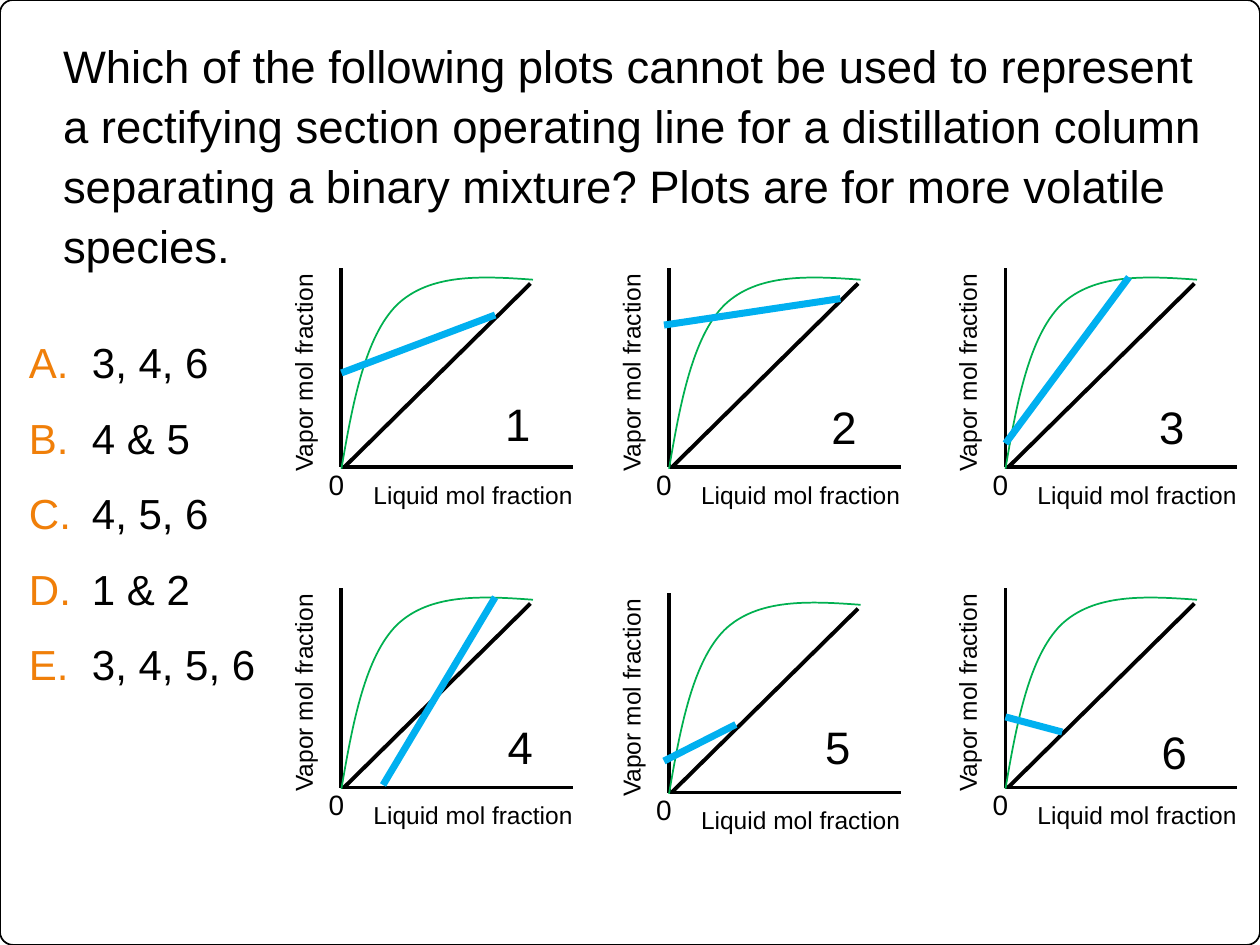
from lxml import etree
from pptx import Presentation
from pptx.dml.color import RGBColor
from pptx.enum.shapes import MSO_CONNECTOR, MSO_SHAPE
from pptx.enum.text import PP_ALIGN
from pptx.oxml.ns import qn
from pptx.util import Inches, Pt

STRAIGHT = MSO_CONNECTOR.STRAIGHT
ROUNDED = MSO_SHAPE.ROUNDED_RECTANGLE
LEFT, CENTER = PP_ALIGN.LEFT, PP_ALIGN.CENTER
BLACK = RGBColor(0x00, 0x00, 0x00)
GREEN = RGBColor(0x00, 0xB0, 0x50)
BLUE = RGBColor(0x00, 0xB0, 0xF0)
ORANGE = RGBColor(0xF0, 0x7F, 0x09)
FONT = "Arial"
WIDTH, HEIGHT = 10, 7.5

QUESTION = (
    "Which of the following plots cannot be used to represent a rectifying "
    "section operating line for a distillation column separating a binary "
    "mixture? Plots are for more volatile species."
)
ANSWERS = ["3, 4, 6", "4 & 5", "4, 5, 6", "1 & 2", "3, 4, 5, 6"]

COLUMNS = [2.71, 5.31, 7.98]
ROWS = [2.13, 4.67]
AXIS_WIDTH, AXIS_HEIGHT = 1.84, 1.58
# Operating line ends and number position, as offsets from each plot's origin
PLOTS = [
    ((1.22, -1.21), (0, -0.75), (1.20, -0.62)),
    ((1.36, -1.34), (-0.04, -1.13), (1.19, -0.59)),
    ((0.98, -1.51), (0, -0.19), (1.12, -0.59)),
    ((1.22, -1.51), (0.33, -0.02), (1.22, -0.59)),
    ((0.53, -0.54), (-0.04, -0.25), (1.14, -0.63)),
    ((0.45, -0.44), (0, -0.56), (1.14, -0.55)),
]
# Start point, then two cubic segments of three points each
EQUILIBRIUM = [(0, 0.01), (0.09, -0.52), (0.19, -1.04), (0.44, -1.29),
               (0.70, -1.54), (1.11, -1.52), (1.52, -1.49)]


def add_text(shapes, box, lines, size, align=LEFT, spacing=None, wrap=True, inset=None):
    text_box = shapes.add_textbox(*map(Inches, box))
    frame = text_box.text_frame
    frame.word_wrap = wrap
    if inset is not None:
        frame.margin_left = frame.margin_right = Inches(inset)
        frame.margin_top = frame.margin_bottom = Inches(inset)
    frame.text = "\n".join(lines)
    for para in frame.paragraphs:
        para.alignment = align
        para.line_spacing = spacing
        for span in para.runs:
            span.font.name = FONT
            span.font.size = Pt(size)
            span.font.color.rgb = BLACK
    return text_box


def add_line(shapes, start, end, color=BLACK, weight=2.25):
    line = shapes.add_connector(STRAIGHT, *map(Inches, (*start, *end)))
    line.line.color.rgb = color
    line.line.width = Pt(weight)
    etree.SubElement(line._element.spPr, qn("a:effectLst"))


def add_curve(shapes, points, color, weight):
    """Draw cubic segments through a start point and triples of points."""
    start, *others = [(Inches(x), Inches(y)) for x, y in points]
    builder = shapes.build_freeform(*start)
    builder.add_line_segments(others, close=False)
    curve = builder.convert_to_shape()
    curve.shadow.inherit = False
    curve.fill.background()
    curve.line.color.rgb = color
    curve.line.width = Pt(weight)
    steps = list(curve._element.iter(qn("a:lnTo")))
    path = steps[0].getparent()
    for first in range(0, len(steps), 3):
        segment = etree.SubElement(path, qn("a:cubicBezTo"))
        for step in steps[first:first + 3]:
            segment.append(step[0])
            path.remove(step)


def add_frame(page, box):
    frame = page.shapes.add_shape(ROUNDED, *map(Inches, box))
    frame.adjustments[0] = 0.014
    frame.shadow.inherit = False
    frame.fill.background()
    frame.line.color.rgb = BLACK
    frame.line.width = Pt(1)


def add_answers(page, box):
    answers = add_text(page.shapes, box, ANSWERS, 24, spacing=1.5, inset=0)
    for para in answers.text_frame.paragraphs:
        properties = para._p.get_or_add_pPr()
        properties.set("marL", str(Inches(0.5)))
        properties.set("indent", str(-Inches(0.5)))
        tint = etree.SubElement(properties, qn("a:buClr"))
        etree.SubElement(tint, qn("a:srgbClr"), val=str(ORANGE))
        etree.SubElement(properties, qn("a:buFont"), typeface=FONT)
        etree.SubElement(properties, qn("a:buAutoNum"), type="alphaUcPeriod")


def add_plot(page, box, number, line_start, line_end, label):
    """Draw one vapor-liquid diagram whose axes fill the box."""
    left, top, width, height = box
    bottom = top + height

    def at(offset):
        return left + offset[0], bottom + offset[1]

    add_line(page.shapes, at((0.02, 0)), at((1.50, -1.46)))
    axes = page.shapes.add_group_shape().shapes
    add_line(axes, (left, top), (left, bottom))
    add_line(axes, (left, bottom), (left + width, bottom))
    add_text(axes, (*at((0.02, 0.05)), 2.05, 0.34), ["Liquid mol fraction"], 14, CENTER)
    vapor = add_text(axes, (*at((-1.23, -0.92)), 1.86, 0.34),
                     ["Vapor mol fraction"], 14, CENTER)
    vapor.rotation = 270
    add_text(axes, (*at((-0.20, -0.05)), 0.33, 0.37), ["0"], 16, wrap=False)
    add_curve(page.shapes, [at(point) for point in EQUILIBRIUM], GREEN, 1)
    add_line(page.shapes, at(line_start), at(line_end), BLUE, 4)
    add_text(page.shapes, (*at(label), 0.45, 0.54), [str(number)], 26)


def main():
    deck = Presentation()
    deck.slide_width, deck.slide_height = Inches(WIDTH), Inches(HEIGHT)
    page = deck.slides.add_slide(deck.slide_layouts[6])
    add_frame(page, (0, 0, WIDTH, HEIGHT))
    add_text(page.shapes, (0.5, 0.26, 9.05, 2.21), [QUESTION], 26, spacing=1.1, inset=0)
    add_answers(page, (0.23, 2.47, 2.05, 3.62))
    for index, plot in enumerate(PLOTS):
        row, column = divmod(index, len(COLUMNS))
        drop = 0.04 if index == 4 else 0
        box = (COLUMNS[column], ROWS[row] + drop, AXIS_WIDTH, AXIS_HEIGHT)
        add_plot(page, box, index + 1, *plot)
    deck.save("out.pptx")


if __name__ == "__main__":
    main()
